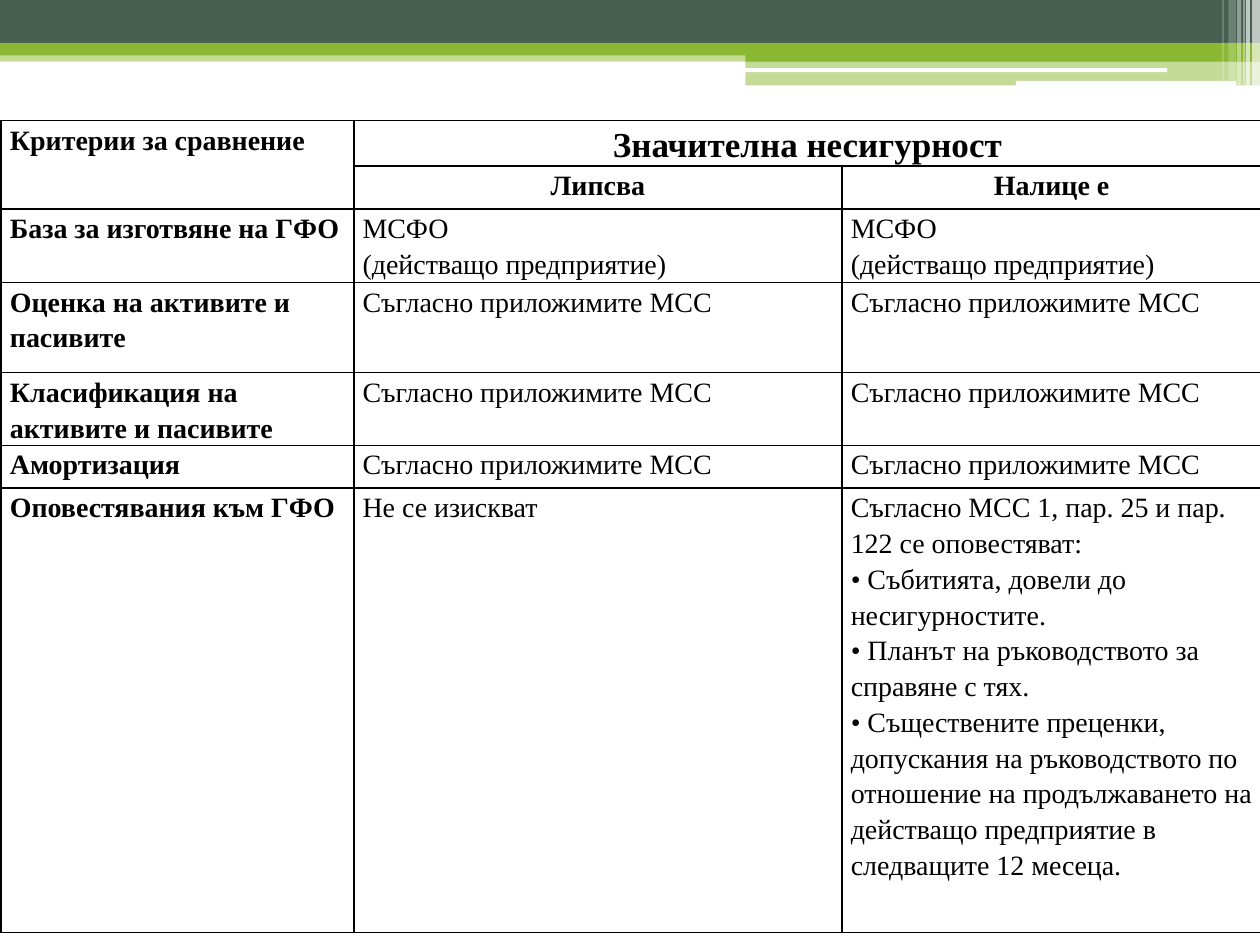
"""Build a slide that compares reporting with and without significant uncertainty."""
from dataclasses import dataclass

from lxml import etree
from pptx import Presentation
from pptx.dml.color import RGBColor
from pptx.enum.shapes import MSO_SHAPE
from pptx.enum.text import PP_ALIGN
from pptx.oxml.ns import qn
from pptx.util import Pt

RECT, ROUND = MSO_SHAPE.RECTANGLE, MSO_SHAPE.ROUNDED_RECTANGLE
LEFT, CENTER = PP_ALIGN.LEFT, PP_ALIGN.CENTER
FONT = "Times New Roman"
DARK, GREEN, WHITE, BLACK = "455F51", "8AB833", "FFFFFF", "000000"


@dataclass
class Bar:
    x: float
    y: float
    w: float
    h: float
    fill: str
    alpha: int = 100
    kind: int = RECT


@dataclass
class Entry:
    row: int
    col: int
    lines: tuple
    bold: bool = False
    size: float = 16
    align: int = LEFT


BARS = [
    Bar(0, 28.8, 720, 6.5, GREEN, 50),
    Bar(0, 0, 720, 24.5, DARK),
    Bar(0, 24.5, 720, 7.2, GREEN),
    Bar(426, 28, 294, 7.2, GREEN),
    Bar(426, 34.8, 294, 14, GREEN, 50),
    Bar(425.5, 39, 241.5, 2.2, WHITE, kind=ROUND),
    Bar(580.5, 46.2, 126, 2.8, WHITE, kind=ROUND),
    Bar(715.5, 0, 4.5, 49, WHITE, 65),
    Bar(712, 0, 2.2, 49, WHITE, 65),
    Bar(710.5, 0, 0.8, 49, WHITE, 60),
    Bar(707, 0, 2.2, 49, WHITE, 40),
    Bar(702, 0, 4.3, 46, WHITE, 20),
    Bar(698.5, 0, 0.8, 46, WHITE, 30),
]
COLS = [201.5, 279, 239.5]
ROWS = [26, 24.5, 42, 51.5, 41.5, 24.5, 254]
BASE = ("МСФО", "(действащо предприятие)")
RULE = ("Съгласно приложимите МСС",)
NOTES = (
    "Съгласно МСС 1, пар. 25 и пар. 122 се оповестяват:",
    "• Събитията, довели до несигурностите.",
    "• Планът на ръководството за справяне с тях.",
    "• Съществените преценки, допускания на ръководството по отношение на "
    "продължаването на действащо предприятие в следващите 12 месeца.",
)
HEADS = [
    Entry(0, 0, ("Критерии за сравнение",), True),
    Entry(0, 1, ("Значителна несигурност",), True, 20, CENTER),
    Entry(1, 1, ("Липсва",), True, align=CENTER),
    Entry(1, 2, ("Налице е",), True, align=CENTER),
]
BODY = [
    ("База за изготвяне на ГФО", BASE, BASE),
    ("Оценка на активите и пасивите", RULE, RULE),
    ("Класификация на активите и пасивите", RULE, RULE),
    ("Амортизация", RULE, RULE),
    ("Оповестявания към ГФО", ("Не се изискват",), NOTES),
]


def paint(fill, tone: str) -> None:
    """Give a fill or a font its solid colour."""
    if hasattr(fill, "solid"):
        fill.solid()
        fill.fore_color.rgb = RGBColor.from_string(tone)
    else:
        fill.color.rgb = RGBColor.from_string(tone)


def draw_bar(slide, bar: Bar) -> None:
    """Draw one strip of the banner."""
    shape = slide.shapes.add_shape(bar.kind, Pt(bar.x), Pt(bar.y), Pt(bar.w), Pt(bar.h))
    shape.shadow.inherit = False
    shape.line.fill.background()
    paint(shape.fill, bar.fill)
    if bar.alpha < 100:
        tone = next(shape.element.spPr.iter(qn("a:srgbClr")))
        etree.SubElement(tone, qn("a:alpha"), val=str(bar.alpha * 1000))


def frame(cell) -> None:
    """Set the borders, margins and empty fill of a cell."""
    props = cell._tc.get_or_add_tcPr()
    for side in ("lnL", "lnR", "lnT", "lnB"):
        line = etree.SubElement(props, qn(f"a:{side}"), w=str(Pt(1)))
        fill = etree.SubElement(line, qn("a:solidFill"))
        etree.SubElement(fill, qn("a:srgbClr"), val=BLACK)
    cell.fill.background()
    cell.margin_left = cell.margin_right = Pt(5)
    cell.margin_top = cell.margin_bottom = Pt(0)


def write(table, entry: Entry) -> None:
    """Write the lines of an entry into its cell."""
    text = table.cell(entry.row, entry.col).text_frame
    for i, line in enumerate(entry.lines):
        para = text.add_paragraph() if i else text.paragraphs[0]
        para.alignment = entry.align
        para.line_spacing = 1.15
        run = para.add_run()
        run.text = line
        run.font.name = FONT
        run.font.size = Pt(entry.size)
        run.font.bold = entry.bold
        paint(run.font, BLACK) if not hasattr(run.font, "fill") else paint(run.font.fill, BLACK)


def draw_table(slide) -> None:
    """Draw the table of criteria."""
    table = slide.shapes.add_table(
        len(ROWS), len(COLS), Pt(0.7), Pt(69), Pt(sum(COLS)), Pt(sum(ROWS))
    ).table
    table.first_row = table.horz_banding = False
    for col, width in zip(table.columns, COLS):
        col.width = Pt(width)
    for row, height in zip(table.rows, ROWS):
        row.height = Pt(height)
        for cell in row.cells:
            frame(cell)
    table.cell(0, 0).merge(table.cell(1, 0))
    table.cell(0, 1).merge(table.cell(0, 2))
    for entry in HEADS:
        write(table, entry)
    for row, (label, *texts) in enumerate(BODY, 2):
        write(table, Entry(row, 0, (label,), True))
        for col, lines in enumerate(texts, 1):
            write(table, Entry(row, col, lines))


def main() -> None:
    """Build and save the slide."""
    deck = Presentation()
    deck.slide_width, deck.slide_height = Pt(720), Pt(540)
    slide = deck.slides.add_slide(deck.slide_layouts[6])
    for bar in BARS:
        draw_bar(slide, bar)
    draw_table(slide)
    deck.save("out.pptx")


if __name__ == "__main__":
    main()
